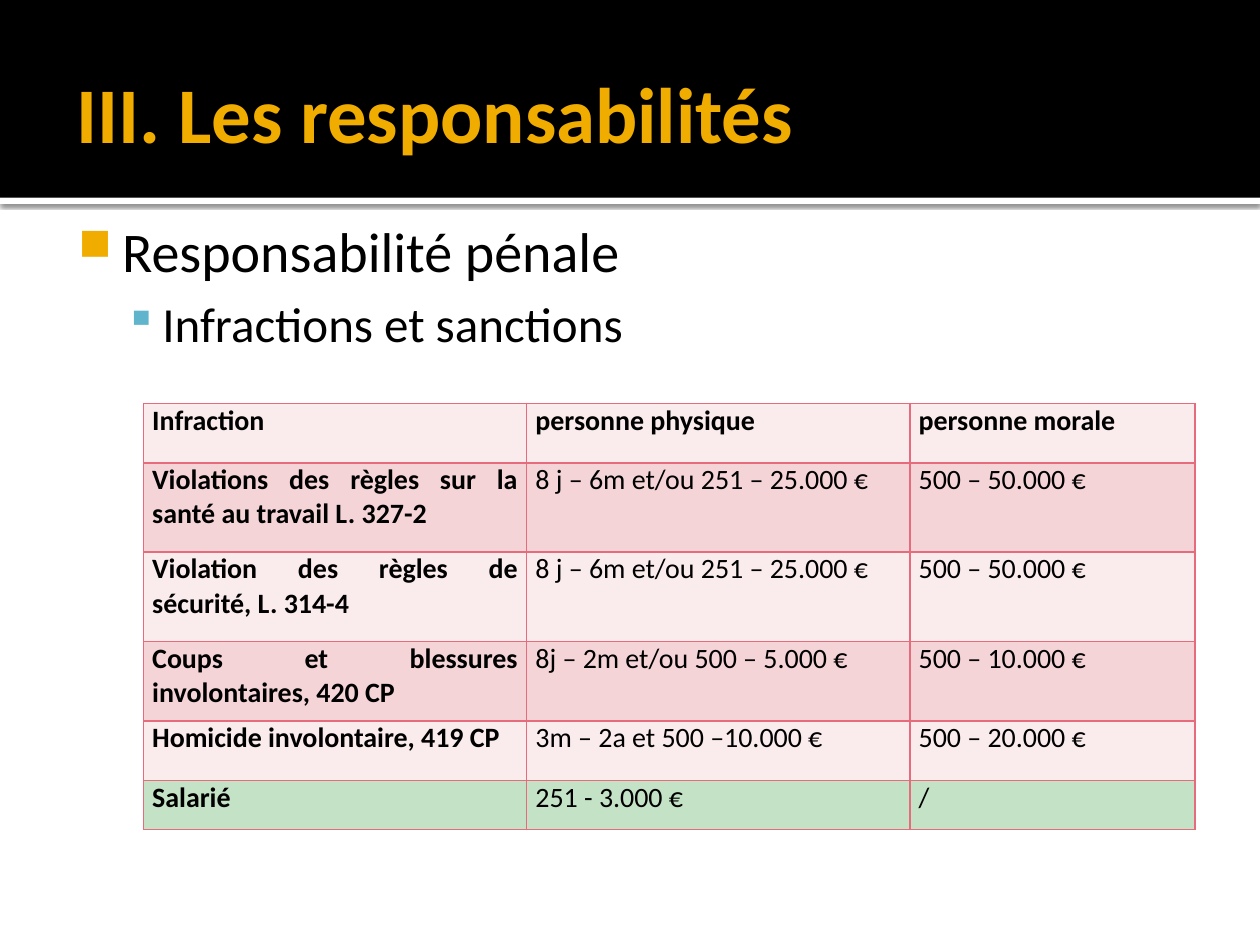
from lxml import etree
from pptx import Presentation
from pptx.dml.color import RGBColor
from pptx.enum.shapes import MSO_SHAPE
from pptx.enum.text import MSO_ANCHOR, MSO_AUTO_SIZE, PP_ALIGN
from pptx.oxml import parse_xml
from pptx.oxml.ns import qn
from pptx.util import Pt

RECTANGLE = MSO_SHAPE.RECTANGLE
MIDDLE, TOP = MSO_ANCHOR.MIDDLE, MSO_ANCHOR.TOP
LEFT, JUSTIFY = PP_ALIGN.LEFT, PP_ALIGN.JUSTIFY
NO_AUTOFIT = MSO_AUTO_SIZE.NONE
DRAWING_NS = "http://schemas.openxmlformats.org/drawingml/2006/main"
FONT = "Calibri"
AMBER, BLUE, ROSE = "F0AD00", "60B5CC", "E66C7D"
LIGHT, MEDIUM, GREEN = "FAEBEC", "F5D4D7", "C4E2C5"

COLUMN_WIDTHS = [219, 219, 163]
SANCTIONS = [
    (34, LIGHT, ["Infraction", "personne physique", "personne morale"]),
    (51, MEDIUM, ["Violations des règles sur la santé au travail L. 327-2",
                  "8 j – 6m et/ou 251 – 25.000 €", "500 – 50.000 €"]),
    (51, LIGHT, ["Violation des règles de sécurité, L. 314-4",
                 "8 j – 6m et/ou 251 – 25.000 €", "500 – 50.000 €"]),
    (45.5, MEDIUM, ["Coups et blessures involontaires, 420 CP",
                    "8j – 2m et/ou 500 – 5.000 €", "500 – 10.000 €"]),
    (34, LIGHT, ["Homicide involontaire, 419 CP",
                 "3m – 2a et 500 –10.000 €", "500 – 20.000 €"]),
    (28, GREEN, ["Salarié", "251 - 3.000 €", "/"]),
]


def paint(color_format, color):
    """Apply a hex colour to a colour format."""
    color_format.rgb = RGBColor.from_string(color)


def fill_solid(target, color):
    """Give a shape or a cell a plain fill."""
    target.fill.solid()
    paint(target.fill.fore_color, color)


def write(paragraph, text, size=16, color="000000", bold=False, align=LEFT):
    """Put formatted text into a paragraph."""
    paragraph.alignment = align
    run = paragraph.add_run()
    run.text = text
    run.font.name, run.font.size, run.font.bold = FONT, Pt(size), bold
    paint(run.font.color, color)


def set_insets(target, left, top, right, bottom):
    """Set the inner margins of a text frame or a cell."""
    target.margin_left, target.margin_top = Pt(left), Pt(top)
    target.margin_right, target.margin_bottom = Pt(right), Pt(bottom)


def add_bar(slide, left, top, width, height, color):
    """Add a plain bar without outline or shadow."""
    bar = slide.shapes.add_shape(RECTANGLE, Pt(left), Pt(top), Pt(width), Pt(height))
    fill_solid(bar, color)
    bar.line.fill.background()
    bar.shadow.inherit = False
    return bar


def add_soft_shadow(bar):
    """Drop a short blurred shadow below a bar."""
    effects = bar.element.spPr.find(qn("a:effectLst"))
    effects.append(etree.fromstring(
        f'<a:outerShdw xmlns:a="{DRAWING_NS}" blurRad="{Pt(2.5)}" dist="{Pt(0.8)}" '
        'dir="5400000" algn="tl" rotWithShape="0"><a:srgbClr val="000000">'
        '<a:alpha val="60000"/></a:srgbClr></a:outerShdw>'))


def add_header(slide, left, top, width, height):
    """Build the black banner, its white edge and the title."""
    add_soft_shadow(add_bar(slide, left, top + height, width, 3.6, "FFFFFF"))
    add_bar(slide, left, top, width, height, "000000")
    title = slide.shapes.title
    title.left, title.top = Pt(left + 36.5), Pt(top + 15)
    title.width, title.height = Pt(648), Pt(98.5)
    frame = title.text_frame
    frame.auto_size, frame.vertical_anchor = NO_AUTOFIT, MIDDLE
    set_insets(frame, 7.2, 3.6, 3.6, 3.6)
    write(frame.paragraphs[0], "III. Les responsabilités", size=45, color=AMBER, bold=True)
    title.element.getparent().append(title.element)


def set_bullet(paragraph, char, color, percent, margin, hang):
    """Give a paragraph a coloured bullet and a hanging indent."""
    properties = paragraph._p.get_or_add_pPr()
    properties.set("marL", str(Pt(margin)))
    properties.set("indent", str(Pt(-hang)))
    bullet_color = etree.SubElement(properties, qn("a:buClr"))
    etree.SubElement(bullet_color, qn("a:srgbClr"), val=color)
    etree.SubElement(properties, qn("a:buSzPct"), val=str(percent * 1000))
    etree.SubElement(properties, qn("a:buChar"), char=char)


def add_outline(slide, left, top, width, height):
    """Build the two-level bullet list."""
    frame = slide.shapes.add_textbox(Pt(left), Pt(top), Pt(width), Pt(height)).text_frame
    frame.word_wrap, frame.vertical_anchor = True, TOP
    set_insets(frame, 4.3, 7.2, 7.2, 3.6)
    topic = frame.paragraphs[0]
    write(topic, "Responsabilité pénale", size=32)
    set_bullet(topic, "■", AMBER, 80, 34.5, 25)
    subtopic = frame.add_paragraph()
    subtopic.level, subtopic.space_before = 1, Pt(5.6)
    write(subtopic, "Infractions et sanctions", size=28)
    set_bullet(subtopic, "▪", BLUE, 90, 57.5, 21.5)


def set_borders(cell, color, weight):
    """Draw the four borders of a cell."""
    properties = cell._tc.get_or_add_tcPr()
    for side in ("lnL", "lnR", "lnT", "lnB"):
        properties.append(parse_xml(
            f'<a:{side} xmlns:a="{DRAWING_NS}" w="{Pt(weight)}"><a:solidFill>'
            f'<a:srgbClr val="{color}"/></a:solidFill></a:{side}>'))


def add_sanctions(slide, left, top):
    """Build the table of offences and penalties."""
    height = sum(row_height for row_height, _, _ in SANCTIONS)
    table = slide.shapes.add_table(
        len(SANCTIONS), len(COLUMN_WIDTHS), Pt(left), Pt(top),
        Pt(sum(COLUMN_WIDTHS)), Pt(height)).table
    for column, width in zip(table.columns, COLUMN_WIDTHS):
        column.width = Pt(width)
    for row_index, (row_height, color, texts) in enumerate(SANCTIONS):
        table.rows[row_index].height = Pt(row_height)
        for column_index, text in enumerate(texts):
            cell = table.cell(row_index, column_index)
            set_insets(cell, 5, 0, 5, 0)
            set_borders(cell, ROSE, 1)
            fill_solid(cell, color)
            write(cell.text_frame.paragraphs[0], text, align=JUSTIFY,
                  bold=row_index == 0 or column_index == 0)


def main():
    """Build and save the slide."""
    deck = Presentation()
    deck.slide_width, deck.slide_height = Pt(720), Pt(540)
    slide = deck.slides.add_slide(deck.slide_layouts.get_by_name("Title Only"))
    fill_solid(slide.background, "FFFFFF")
    add_header(slide, 0, 0, 720, 113)
    add_outline(slide, 31, 116.5, 648, 364.5)
    add_sanctions(slide, 82, 230.5)
    deck.save("out.pptx")


if __name__ == "__main__":
    main()
